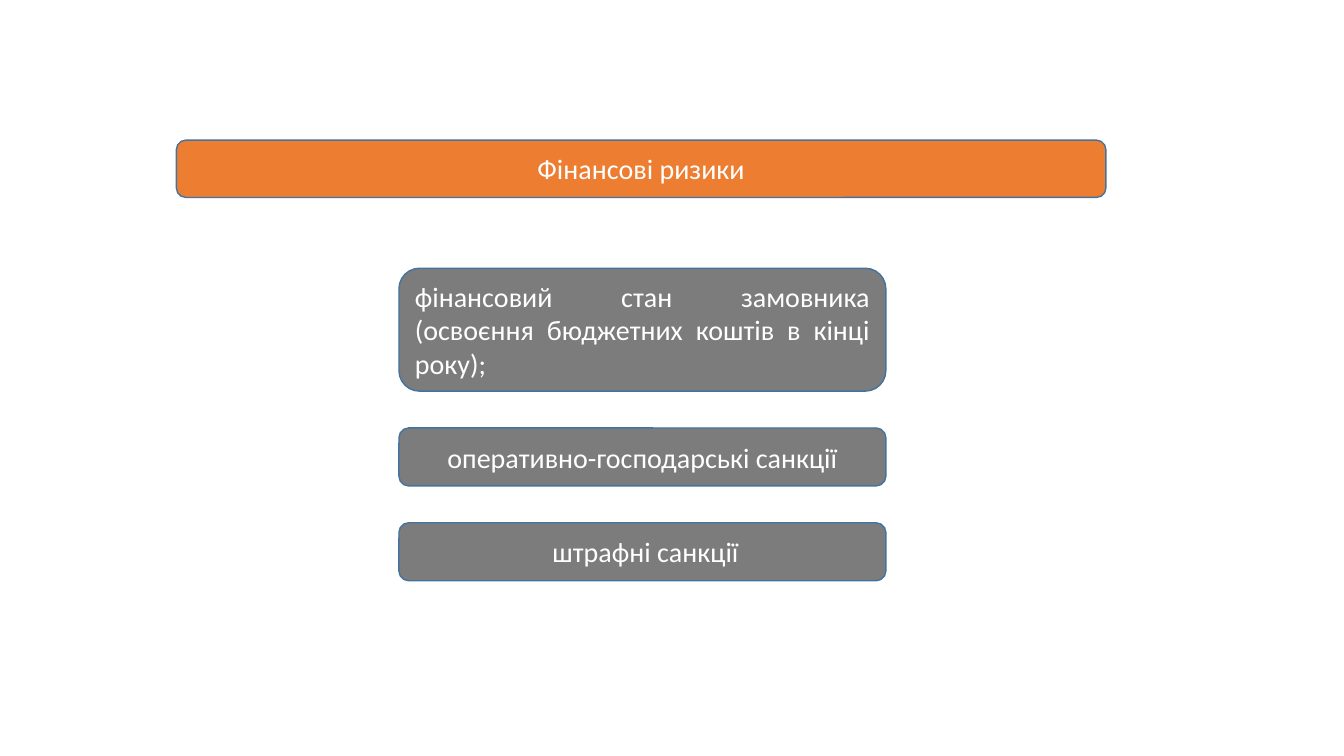
from pptx import Presentation
from pptx.dml.color import RGBColor
from pptx.enum.shapes import MSO_SHAPE
from pptx.enum.text import MSO_ANCHOR, PP_ALIGN
from pptx.util import Pt

ROUNDED = MSO_SHAPE.ROUNDED_RECTANGLE
MIDDLE = MSO_ANCHOR.MIDDLE
CENTER, JUSTIFY = PP_ALIGN.CENTER, PP_ALIGN.JUSTIFY

HEADING = "Фінансові ризики"
RISKS = [
    ("фінансовий стан замовника (освоєння бюджетних коштів в кінці року);", 87.8, JUSTIFY),
    ("оперативно-господарські санкції", 41.4, CENTER),
    (" штрафні санкції", 41.4, CENTER),
]

SLIDE_SIZE = (960, 540)
HEADING_BOX = (126, 100.1, 664, 41)
RISK_LEFT, RISK_TOP, RISK_WIDTH, RISK_GAP = 285, 191.6, 347.8, 26.3
ORANGE, GRAY, BLUE, WHITE = "ED7D31", "7C7C7C", "43739E", "FFFFFF"
FONT = {"name": "Calibri", "size": Pt(20)}


def color(target, value):
    target.rgb = RGBColor.from_string(value)


def add_box(slide, box, text, fill, alignment):
    shape = slide.shapes.add_shape(ROUNDED, *map(Pt, box))
    shape.shadow.inherit = False
    shape.fill.solid()
    color(shape.fill.fore_color, fill)
    color(shape.line.color, BLUE)
    shape.line.width = Pt(1)
    frame = shape.text_frame
    frame.word_wrap = True
    frame.vertical_anchor = MIDDLE
    paragraph = frame.paragraphs[0]
    paragraph.alignment = alignment
    run = paragraph.add_run()
    run.text = text
    for attribute, value in FONT.items():
        setattr(run.font, attribute, value)
    color(run.font.color, WHITE)


def main():
    presentation = Presentation()
    presentation.slide_width, presentation.slide_height = map(Pt, SLIDE_SIZE)
    slide = presentation.slides.add_slide(presentation.slide_layouts[6])
    add_box(slide, HEADING_BOX, HEADING, ORANGE, CENTER)
    top = RISK_TOP
    for text, height, alignment in RISKS:
        add_box(slide, (RISK_LEFT, top, RISK_WIDTH, height), text, GRAY, alignment)
        top += height + RISK_GAP
    presentation.save("out.pptx")


if __name__ == "__main__":
    main()
